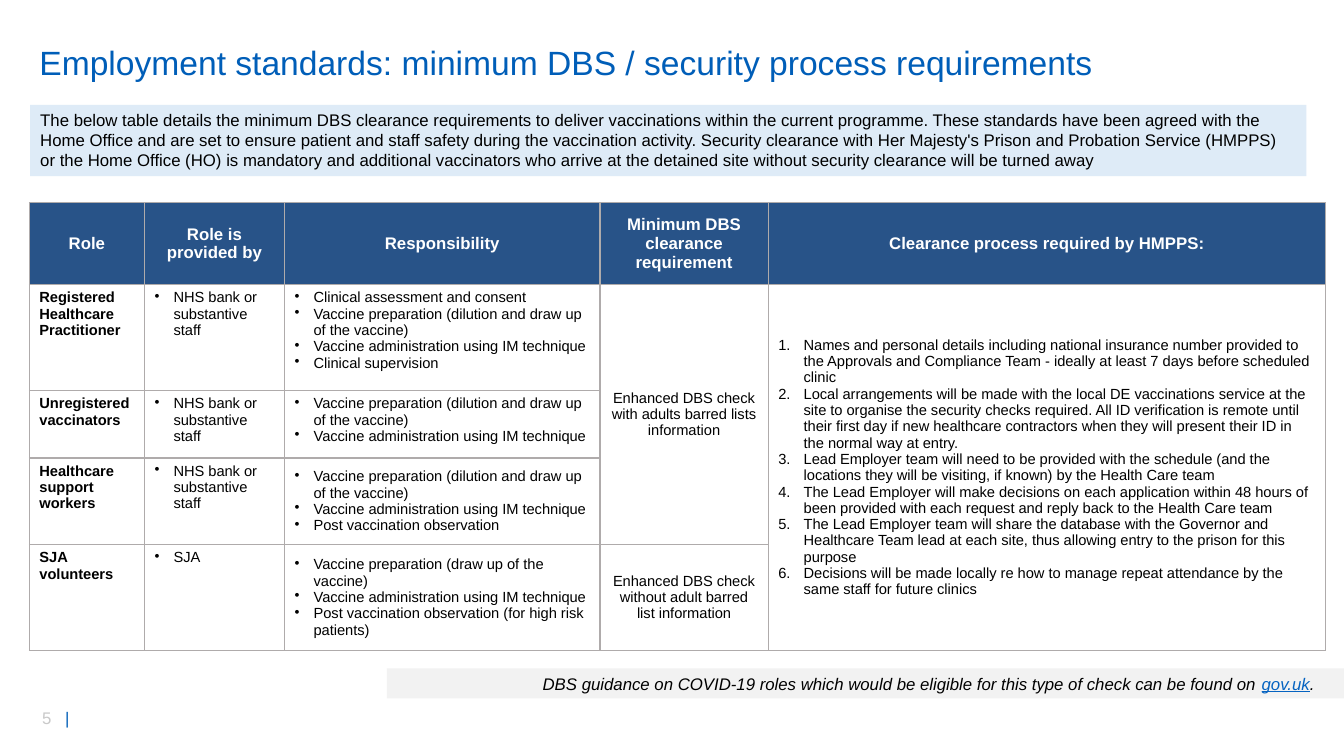
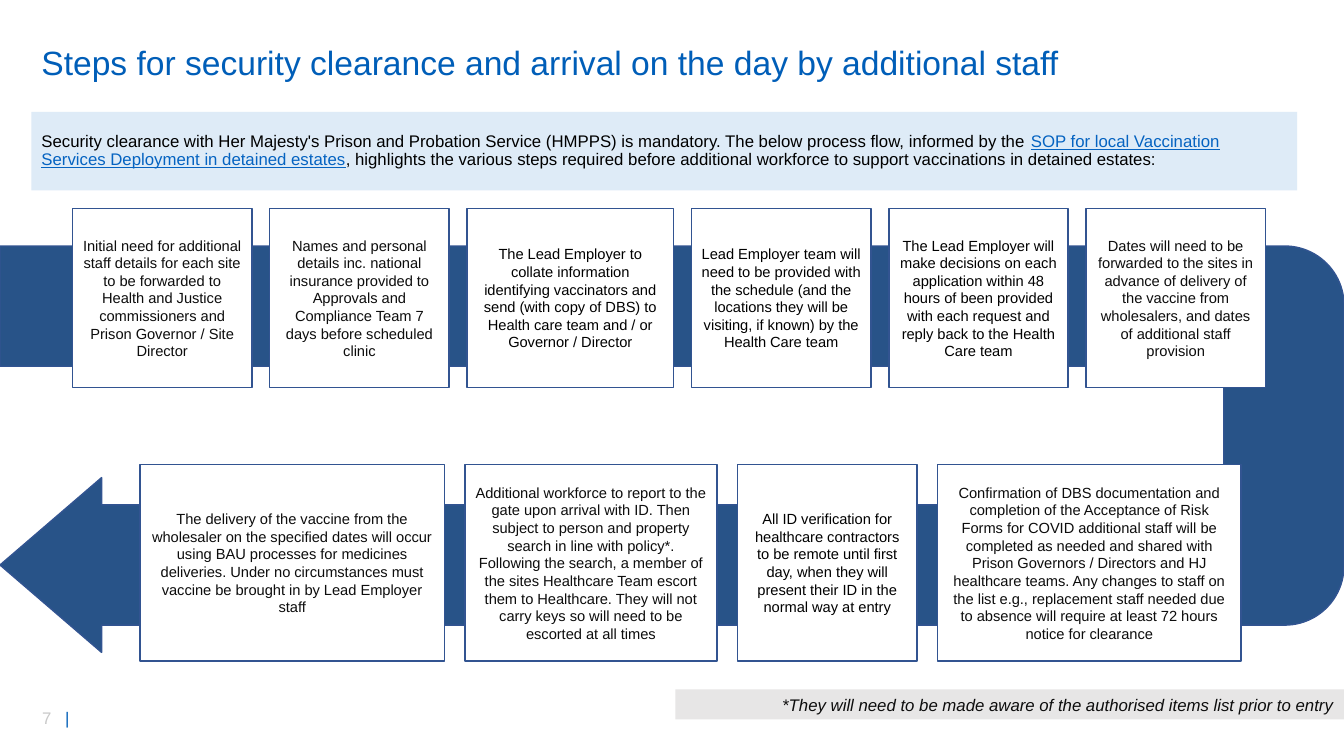
from lxml import etree
from pptx import Presentation
from pptx.dml.color import RGBColor
from pptx.enum.shapes import MSO_SHAPE
from pptx.enum.text import MSO_ANCHOR, MSO_AUTO_SIZE, PP_ALIGN
from pptx.oxml.ns import qn
from pptx.util import Cm, Pt

RECTANGLE, U_TURN = MSO_SHAPE.RECTANGLE, MSO_SHAPE.U_TURN_ARROW
TOP, MIDDLE = MSO_ANCHOR.TOP, MSO_ANCHOR.MIDDLE
LEFT, CENTER, RIGHT = PP_ALIGN.LEFT, PP_ALIGN.CENTER, PP_ALIGN.RIGHT
NO_FIT = MSO_AUTO_SIZE.NONE

FONT = "Arial"
BLUE, NAVY, OUTLINE, LINK = "005EB8", "285388", "325491", "0563C1"
PALE_BLUE, BLACK, INK, WHITE = "DEEBF7", "000000", "0D0D0D", "FFFFFF"
PAGE_GREY, BORDER_GREY = "C9C9C9", "AFABAB"
PAGE_WIDTH, PAGE_HEIGHT = 33.87, 19.05

# Content: a span is (text, colour) and link-coloured spans are underlined
STANDARDS = {
    "number": "5",
    "title": "Employment standards: minimum DBS / security process requirements",
    "title_left": 0.74,
    "intro": [("The below table details the minimum DBS clearance requirements to deliver vaccinations within the current programme. These standards have been agreed with the Home Office and are set to ensure patient and staff safety during the vaccination activity. Security clearance with Her Majesty's Prison and Probation Service (HMPPS) or the Home Office (HO) is mandatory and additional vaccinators who arrive at the detained site without security clearance will be turned away", BLACK)],
    "intro_box": (0.76, 2.64, 32.16, 1.8),
    "intro_anchor": TOP,
    "intro_spacing": 1.0,
    "note": [("DBS guidance on COVID-19 roles which would be eligible for this type of check can be found on ", BLACK),
             ("gov.uk", LINK), (".", BLACK)],
    "note_place": (9.75, 16.84),
    "note_inset": 0.74,
    "note_fill": "F2F2F2",
}
CLEARANCE = {
    "number": "7",
    "title": "Steps for security clearance and arrival on the day by additional staff",
    "title_left": 0.79,
    "intro": [("Security clearance with Her Majesty's Prison and Probation Service (HMPPS) is mandatory. The below process flow, informed by the ", BLACK),
              ("SOP for local Vaccination Services Deployment in detained estates", LINK),
              (", highlights the various steps required before additional workforce to support vaccinations in detained estates:", BLACK)],
    "intro_box": (0.79, 2.82, 31.9, 1.98),
    "intro_anchor": MIDDLE,
    "intro_spacing": 0.9,
    "note": [("*They will need to be made aware of the authorised items list prior to entry", INK)],
    "note_place": (17.02, 17.37),
    "note_inset": 0.25,
    "note_fill": "E7E6E6",
}

HEADERS = ["Role", "Role is provided by", "Responsibility",
           "Minimum DBS clearance requirement", "Clearance process required by HMPPS:"]
BANK_STAFF = "NHS bank or substantive staff"
DILUTION = "Vaccine preparation (dilution and draw up of the vaccine)"
TECHNIQUE = "Vaccine administration using IM technique"
# role, provider, responsibilities, anchor of the responsibilities
ROLES = [
    ("Registered Healthcare Practitioner", BANK_STAFF,
     ["Clinical assessment and consent", DILUTION, TECHNIQUE, "Clinical supervision"], TOP),
    ("Unregistered vaccinators", BANK_STAFF, [DILUTION, TECHNIQUE], TOP),
    ("Healthcare support workers", BANK_STAFF,
     [DILUTION, TECHNIQUE, "Post vaccination observation"], MIDDLE),
    ("SJA volunteers", "SJA",
     ["Vaccine preparation (draw up of the vaccine)", TECHNIQUE,
      "Post vaccination observation (for high risk patients)"], MIDDLE),
]
# first row, last row, text
CHECKS = [
    (1, 3, "Enhanced DBS check with adults barred lists information"),
    (4, 4, "Enhanced DBS check without adult barred list information"),
]
PROCESS = [
    "Names and personal details including national insurance number provided to the Approvals and Compliance Team - ideally at least 7 days before scheduled clinic",
    "Local arrangements will be made with the local DE vaccinations service at the site to organise the security checks required. All ID verification is remote until their first day if new healthcare contractors when they will present their ID in the normal way at entry.",
    "Lead Employer team will need to be provided with the schedule (and the locations they will be visiting, if known) by the Health Care team",
    "The Lead Employer will make decisions on each application within 48 hours of been provided with each request and reply back to the Health Care team",
    "The Lead Employer team will share the database with the Governor and Healthcare Team lead at each site, thus allowing entry to the prison for this purpose",
    "Decisions will be made locally re how to manage repeat attendance by the same staff for future clinics",
]
COLUMN_WIDTHS = [2.9, 3.53, 7.95, 4.24, 14.05]
ROW_HEIGHTS = [2.06, 2.67, 1.7, 2.18, 2.67]

# Each row of steps, left to right: (width, text colour, text)
STEP_ROWS = [
    {"left": 1.83, "top": 5.26, "height": 4.5, "gap": 0.45, "steps": [
        (4.52, INK, "Initial need for additional staff details for each site to be forwarded to Health and Justice commissioners and Prison Governor / Site Director"),
        (4.52, INK, "Names and personal details inc. national insurance provided to Approvals and Compliance Team 7 days before scheduled clinic"),
        (5.21, BLACK, "The Lead Employer to collate information identifying vaccinators and send (with copy of DBS) to Health care team and / or Governor / Director"),
        (4.52, BLACK, "Lead Employer team will need to be provided with the schedule (and the locations they will be visiting, if known) by the Health Care team"),
        (4.52, BLACK, "The Lead Employer will make decisions on each application within 48 hours of been provided with each request and reply back to the Health Care team"),
        (4.52, INK, "Dates will need to be forwarded to the sites in advance of delivery of the vaccine from wholesalers, and dates of additional staff provision"),
    ]},
    {"left": 3.53, "top": 11.71, "height": 4.95, "gap": 0.52, "steps": [
        (7.67, INK, "The delivery of the vaccine from the wholesaler on the specified dates will occur using BAU processes for medicines deliveries. Under no circumstances must vaccine be brought in by Lead Employer staff"),
        (6.35, INK, "Additional workforce to report to the gate upon arrival with ID. Then subject to person and property search in line with policy*. Following the search, a member of the sites Healthcare Team escort them to Healthcare. They will not carry keys so will need to be escorted at all times"),
        (4.52, BLACK, "All ID verification for healthcare contractors to be remote until first day, when they will present their ID in the normal way at entry"),
        (7.65, INK, "Confirmation of DBS documentation and completion of the Acceptance of Risk Forms for COVID additional staff will be completed as needed and shared with Prison Governors / Directors and HJ healthcare teams. Any changes to staff on the list e.g., replacement staff needed due to absence will require at least 72 hours notice for clearance"),
    ]},
]


def colour(value):
    return RGBColor.from_string(value)


def paint(shape, fill, line=None):
    shape.fill.solid()
    shape.fill.fore_color.rgb = colour(fill)
    if line:
        shape.line.color.rgb = colour(line)
        shape.line.width = Pt(1)
    else:
        shape.line.fill.background()


def add_spans(para, spans, size=12, align=LEFT, bold=False, italic=False):
    para.alignment = align
    para.space_before = Pt(0)
    for text, ink in spans:
        span = para.add_run()
        span.text = text
        span.font.name = FONT
        span.font.size = Pt(size)
        span.font.bold = bold
        span.font.italic = italic
        span.font.underline = ink == LINK
        span.font.color.rgb = colour(ink)


def set_marker(para, tag, indent=0.0, **attributes):
    """Give a paragraph a hanging bullet or number, or take it away."""
    properties = para._p.get_or_add_pPr()
    properties.set("marL", str(Cm(indent)))
    properties.set("indent", str(-Cm(indent)))
    etree.SubElement(properties, qn(tag), attributes)


def place(shape, left, top, width, height):
    shape.left, shape.top = Cm(left), Cm(top)
    shape.width, shape.height = Cm(width), Cm(height)


def add_block(page, kind, bounds, fill, line=None):
    box = page.shapes.add_shape(kind, *map(Cm, bounds))
    box.shadow.inherit = False
    paint(box, fill, line)
    box.text_frame.word_wrap = True
    return box


def add_page(deck, content):
    """Build the title, introduction, footnote and page number."""
    page = deck.slides.add_slide(deck.slide_layouts[1])
    title, intro = page.shapes.title, page.placeholders[1]

    place(title, content["title_left"], 0.79, 27.99, 1.7)
    place(intro, *content["intro_box"])
    paint(intro, PALE_BLUE)
    parts = [(title, [(content["title"], BLUE)], 24, MIDDLE, 0.9),
             (intro, content["intro"], 12, content["intro_anchor"], content["intro_spacing"])]
    for box, spans, size, anchor, spacing in parts:
        frame = box.text_frame
        frame.auto_size = NO_FIT
        frame.vertical_anchor = anchor
        para = frame.paragraphs[0]
        set_marker(para, "a:buNone")
        add_spans(para, spans, size)
        para.line_spacing = spacing

    left, top = content["note_place"]
    note = add_block(page, RECTANGLE, (left, top, PAGE_WIDTH - left, 0.76), content["note_fill"])
    note.text_frame.margin_right = Cm(content["note_inset"])
    add_spans(note.text_frame.paragraphs[0], content["note"], align=RIGHT, italic=True)

    number = page.shapes.add_textbox(Cm(0.81), Cm(17.7), Cm(1.8), Cm(0.76))
    para = number.text_frame.paragraphs[0]
    tabs = etree.SubElement(para._p.get_or_add_pPr(), qn("a:tabLst"))
    etree.SubElement(tabs, qn("a:tab"), pos=str(Cm(0.58)), algn="l")
    add_spans(para, [(content["number"] + "\t", PAGE_GREY), ("|", BLUE)])
    return page


def style_cell(cell, fill):
    properties = cell._tc.get_or_add_tcPr()
    for side in ("a:lnL", "a:lnR", "a:lnT", "a:lnB"):
        border = etree.SubElement(properties, qn(side), w=str(Pt(1)))
        solid = etree.SubElement(border, qn("a:solidFill"))
        etree.SubElement(solid, qn("a:srgbClr"), val=BORDER_GREY)
    cell.fill.solid()
    cell.fill.fore_color.rgb = colour(fill)


def fill_cell(cell, items, anchor=TOP, marker=None, ink=BLACK, **style):
    cell.vertical_anchor = anchor
    frame = cell.text_frame
    for index, text in enumerate(items):
        para = frame.add_paragraph() if index else frame.paragraphs[0]
        if marker == "bullet":
            set_marker(para, "a:buChar", 0.48, char="•")
        elif marker == "number":
            set_marker(para, "a:buAutoNum", 0.64, type="arabicPeriod")
        add_spans(para, [(text, ink)], **{"size": 10.5, **style})


def add_roles_table(page):
    table = page.shapes.add_table(
        len(ROW_HEIGHTS), len(COLUMN_WIDTHS), Cm(0.74), Cm(5.11),
        Cm(sum(COLUMN_WIDTHS)), Cm(sum(ROW_HEIGHTS))).table
    table.horz_banding = False
    for column, width in zip(table.columns, COLUMN_WIDTHS):
        column.width = Cm(width)
    for index, (row, height) in enumerate(zip(table.rows, ROW_HEIGHTS)):
        row.height = Cm(height)
        for cell in row.cells:
            style_cell(cell, WHITE if index else NAVY)

    for column, header in enumerate(HEADERS):
        fill_cell(table.cell(0, column), [header], MIDDLE, ink=WHITE,
                  size=12, align=CENTER, bold=True)
    for row, (role, provider, duties, anchor) in enumerate(ROLES, 1):
        fill_cell(table.cell(row, 0), [role], bold=True)
        fill_cell(table.cell(row, 1), [provider], marker="bullet")
        fill_cell(table.cell(row, 2), duties, anchor, "bullet")
    for first, last, text in CHECKS:
        if last > first:
            table.cell(first, 3).merge(table.cell(last, 3))
        fill_cell(table.cell(first, 3), [text], MIDDLE, align=CENTER)
    table.cell(1, 4).merge(table.cell(len(ROLES), 4))
    fill_cell(table.cell(1, 4), PROCESS, MIDDLE, "number")


def add_process_flow(page):
    # The arrow is drawn upright, then turned about its centre
    depth, middle = 10.24, 11.32
    arrow = add_block(page, U_TURN,
                      ((PAGE_WIDTH - depth) / 2, middle - PAGE_WIDTH / 2, depth, PAGE_WIDTH),
                      NAVY, OUTLINE)
    arrow.rotation = 90
    for index, value in enumerate([0.296, 0.215, 0.25, 0.146, 1]):
        arrow.adjustments[index] = value

    for row in STEP_ROWS:
        left = row["left"]
        for width, ink, text in row["steps"]:
            box = add_block(page, RECTANGLE, (left, row["top"], width, row["height"]),
                            WHITE, OUTLINE)
            box.text_frame.vertical_anchor = MIDDLE
            add_spans(box.text_frame.paragraphs[0], [(text, ink)], 10.5, CENTER)
            left += width + row["gap"]


def main():
    deck = Presentation()
    deck.slide_width, deck.slide_height = Cm(PAGE_WIDTH), Cm(PAGE_HEIGHT)
    add_roles_table(add_page(deck, STANDARDS))
    add_process_flow(add_page(deck, CLEARANCE))
    deck.save("out.pptx")


if __name__ == "__main__":
    main()
